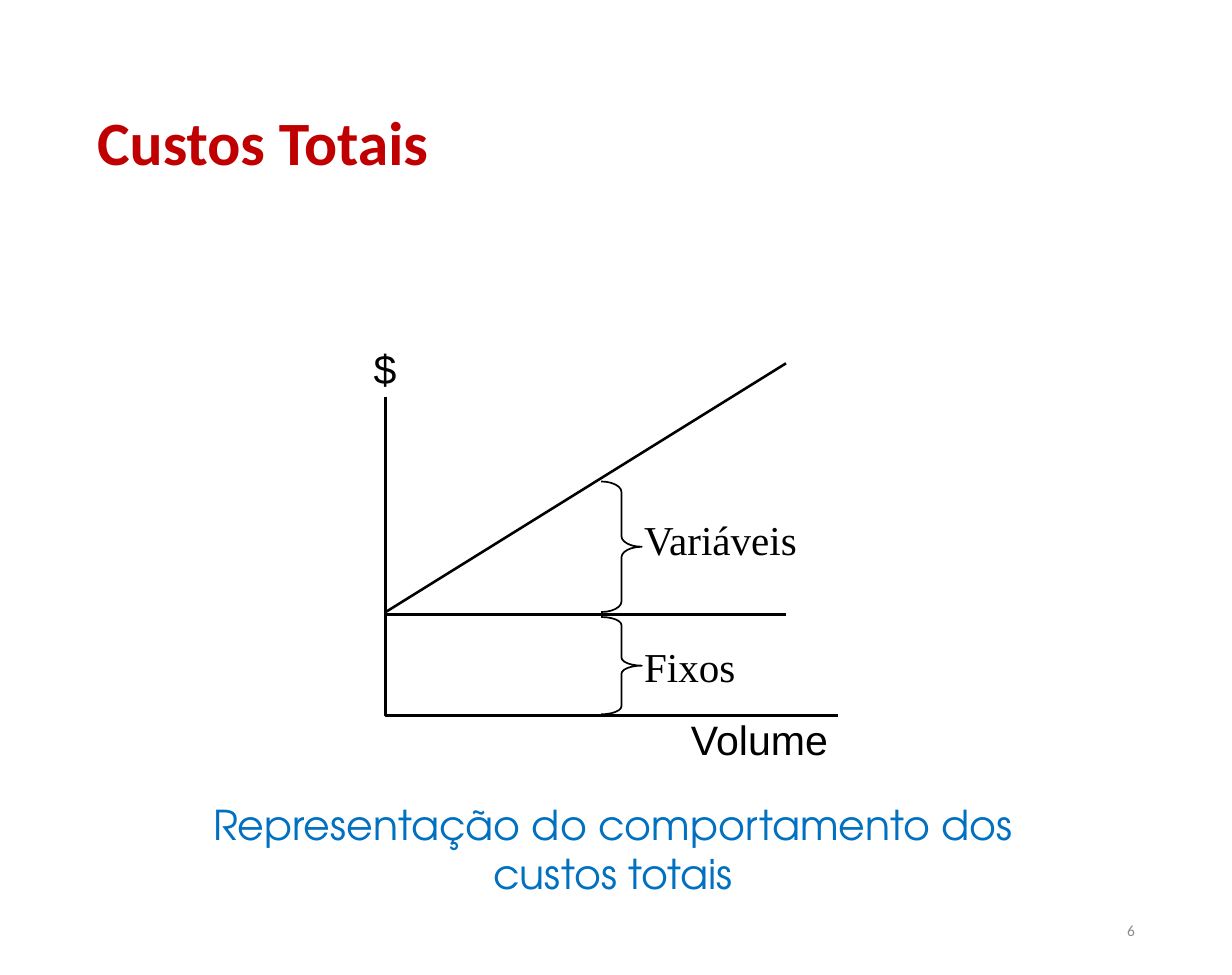
from lxml import etree
from pptx import Presentation
from pptx.dml import color
from pptx.enum import shapes, text
from pptx.oxml import ns
from pptx.util import Inches, Pt

BLACK = "000000"
LEFT, CENTER, RIGHT = text.PP_ALIGN.LEFT, text.PP_ALIGN.CENTER, text.PP_ALIGN.RIGHT
TOP, MIDDLE = text.MSO_ANCHOR.TOP, text.MSO_ANCHOR.MIDDLE


def rgb(value):
    """Turn a hex string into a colour."""
    return color.RGBColor.from_string(value)


def add_text(parent, box, words, size, font, fill=BLACK, bold=False,
             align=LEFT, anchor=TOP, spacing=None, tight=False):
    """Place one paragraph in a box; a tight box has no insets or wrapping."""
    sp = parent.add_textbox(*map(Inches, box))
    tf = sp.text_frame
    tf.word_wrap = not tight
    tf.vertical_anchor = anchor
    if tight:
        tf.margin_left = tf.margin_right = tf.margin_top = tf.margin_bottom = 0
    p = tf.paragraphs[0]
    p.text = words
    p.alignment = align
    p.line_spacing = spacing
    p.font.size, p.font.name, p.font.bold = Pt(size), font, bold
    p.font.color.rgb = rgb(fill)


def set_line(sp, width):
    """Give a shape or connector a black line."""
    sp.line.color.rgb = rgb(BLACK)
    sp.line.width = Pt(width)


def set_outline(sp, width):
    """Leave a shape with only a black outline."""
    sp.shadow.inherit = False
    sp.fill.background()
    set_line(sp, width)


def add_line(parent, start, end):
    """Draw a straight cost line without shadow."""
    cn = parent.add_connector(
        shapes.MSO_CONNECTOR.STRAIGHT, *map(Inches, (*start, *end)))
    set_line(cn, 1.5)
    etree.SubElement(cn._element.spPr, ns.qn("a:effectLst"))


def add_cost_part(parent, box, adj, label, label_top):
    """Draw a brace over a cost part, with its label to the right."""
    left, top, width, height = box
    sp = parent.add_shape(shapes.MSO_SHAPE.RIGHT_BRACE, *map(Inches, box))
    sp.adjustments[0] = adj
    set_outline(sp, 1)
    add_text(parent, (left + 0.25, top + label_top, 1.67, 0.5), label, 24, "Times New Roman")


def add_cost_diagram(s, box):
    """Draw axes, cost lines and braces within the box of the axes."""
    x, y, w, h = box
    group = s.shapes.add_group_shape().shapes
    axes = group.build_freeform(Inches(x), Inches(y))
    axes.add_line_segments(
        [(Inches(x), Inches(y + h)), (Inches(x + w), Inches(y + h))], close=False)
    set_outline(axes.convert_to_shape(), 1.88)
    add_text(group, (x + 2.47, y + h - 0.01, 1.13, 0.4), "Volume", 24, "Arial",
             align=CENTER, tight=True)
    add_text(group, (x - 0.1, y - 0.43, 0.19, 0.4), "$", 24, "Arial",
             align=CENTER, tight=True)
    add_line(group, (x, y + 1.75), (x + 3.25, y - 0.27))
    add_line(group, (x, y + 1.77), (x + 3.25, y + 1.77))
    add_cost_part(group, (x + 1.75, y + 0.69, 0.33, 1.06), 0.26, "Variáveis", 0.22)
    add_cost_part(group, (x + 1.75, y + 1.79, 0.33, 0.79), 0.2, "Fixos", 0.15)


def add_frame(s):
    """Place the title, the caption and the slide number."""
    add_text(s.shapes, (0.69, 0.42, 8.62, 1.53), "Custos Totais", 36, "Calibri", "C00000",
             bold=True, anchor=MIDDLE, spacing=0.9)
    add_text(s.shapes, (1.2, 6.44, 7.55, 0.91),
             "Representação do comportamento dos custos totais",
             24, "TeX Gyre Adventor", "0070C0", align=CENTER)
    add_text(s.shapes, (7.06, 7.34, 2.25, 0.42), "6", 9, "Calibri", "8C8C8C",
             align=RIGHT, anchor=MIDDLE)


def main():
    """Build and save the slide."""
    prs = Presentation()
    prs.slide_width, prs.slide_height = Inches(10), Inches(95) // 12
    s = prs.slides.add_slide(prs.slide_layouts[6])
    add_frame(s)
    add_cost_diagram(s, (3.13, 3.22, 3.67, 2.59))
    prs.save("out.pptx")


if __name__ == "__main__":
    main()
